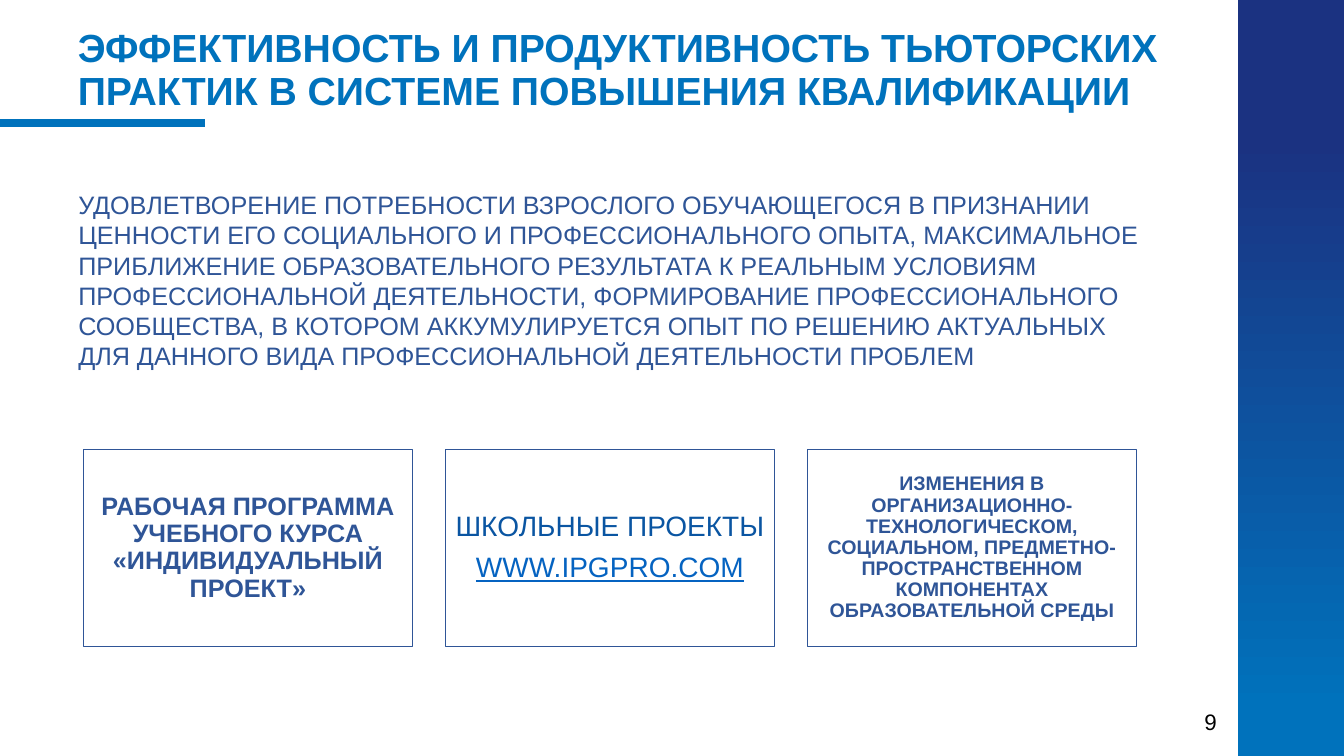
from lxml.etree import SubElement
from pptx import Presentation
from pptx.dml.color import RGBColor
from pptx.enum.shapes import MSO_CONNECTOR, MSO_SHAPE
from pptx.enum.text import MSO_ANCHOR, MSO_AUTO_SIZE, PP_ALIGN
from pptx.oxml.ns import qn
from pptx.util import Pt

SKY = "0072BC"
NAVY = "1B3281"
STEEL = "2F5597"


def tint(code):
    return RGBColor.from_string(code)


def write(frame, text, size=18, color=STEEL, bold=False, under=False,
          align=PP_ALIGN.LEFT, space=None, after=0, more=False):
    para = frame.add_paragraph() if more else frame.paragraphs[0]
    para.alignment = align
    para.line_spacing = space
    para.space_after = Pt(after)
    run = para.add_run()
    run.text = text
    font = run.font
    font.name = "Arial"
    font.size = Pt(size)
    font.bold = bold
    font.underline = under
    font.color.rgb = tint(color)


class Deck:
    def __init__(self):
        self.prs = Presentation()
        self.prs.slide_width = Pt(960)
        self.prs.slide_height = Pt(540)
        self.slide = self.prs.slides.add_slide(self.prs.slide_layouts[5])
        self.shapes = self.slide.shapes

    def title(self, text, x, y, w, h, **form):
        head = self.shapes.title
        head.left, head.top, head.width, head.height = map(Pt, (x, y, w, h))
        frame = head.text_frame
        frame.auto_size = MSO_AUTO_SIZE.NONE
        frame.vertical_anchor = MSO_ANCHOR.MIDDLE
        write(frame, text, **form)

    def label(self, text, x, y, w, h, anchor=MSO_ANCHOR.TOP, **form):
        frame = self.shapes.add_textbox(*map(Pt, (x, y, w, h))).text_frame
        frame.word_wrap = True
        frame.vertical_anchor = anchor
        write(frame, text, **form)

    def rect(self, x, y, w, h):
        shape = self.shapes.add_shape(MSO_SHAPE.RECTANGLE, *map(Pt, (x, y, w, h)))
        shape.shadow.inherit = False
        return shape

    def band(self, x, y, w, h, stops):
        shape = self.rect(x, y, w, h)
        shape.line.fill.background()
        shape.fill.gradient()
        shape.fill.gradient_angle = 270
        for stop, (place, color) in zip(shape.fill.gradient_stops, stops):
            stop.position = place
            stop.color.rgb = tint(color)

    def rule(self, x, y, end, color, width):
        line = self.shapes.add_connector(
            MSO_CONNECTOR.STRAIGHT, Pt(x), Pt(y), Pt(end), Pt(y))
        line.line.color.rgb = tint(color)
        line.line.width = Pt(width)
        SubElement(line._element.spPr, qn("a:effectLst"))

    def card(self, x, y, w, h, inset, size, lines):
        shape = self.rect(x, y, w, h)
        shape.fill.solid()
        shape.fill.fore_color.rgb = tint("FFFFFF")
        shape.line.color.rgb = tint(STEEL)
        shape.line.width = Pt(1)
        frame = shape.text_frame
        frame.word_wrap = True
        frame.vertical_anchor = MSO_ANCHOR.MIDDLE
        frame.margin_left = frame.margin_right = Pt(inset)
        frame.margin_top = frame.margin_bottom = Pt(inset)
        for row, (text, form) in enumerate(lines):
            write(frame, text, size=size, align=PP_ALIGN.CENTER, space=0.9,
                  after=0.4 * size, more=row > 0, **form)


def main():
    deck = Deck()
    deck.band(884.2, 0, 75.8, 540, [(0.18, NAVY), (0.94, SKY)])
    deck.rule(0, 87.8, 146.2, SKY, 6)
    deck.title("ЭФФЕКТИВНОСТЬ И ПРОДУКТИВНОСТЬ ТЬЮТОРСКИХ ПРАКТИК "
               "В СИСТЕМЕ ПОВЫШЕНИЯ КВАЛИФИКАЦИИ",
               48.4, 12.2, 828.6, 75.6, size=28, color=SKY, bold=True,
               space=Pt(31))
    deck.label("УДОВЛЕТВОРЕНИЕ ПОТРЕБНОСТИ ВЗРОСЛОГО ОБУЧАЮЩЕГОСЯ В ПРИЗНАНИИ "
               "ЦЕННОСТИ ЕГО СОЦИАЛЬНОГО И ПРОФЕССИОНАЛЬНОГО ОПЫТА, МАКСИМАЛЬНОЕ "
               "ПРИБЛИЖЕНИЕ ОБРАЗОВАТЕЛЬНОГО РЕЗУЛЬТАТА К РЕАЛЬНЫМ УСЛОВИЯМ "
               "ПРОФЕССИОНАЛЬНОЙ ДЕЯТЕЛЬНОСТИ, ФОРМИРОВАНИЕ ПРОФЕССИОНАЛЬНОГО "
               "СООБЩЕСТВА, В КОТОРОМ АККУМУЛИРУЕТСЯ ОПЫТ ПО РЕШЕНИЮ АКТУАЛЬНЫХ "
               "ДЛЯ ДАННОГО ВИДА ПРОФЕССИОНАЛЬНОЙ ДЕЯТЕЛЬНОСТИ ПРОБЛЕМ",
               48.8, 131.8, 774, 138.2)
    strong = {"bold": True}
    cards = [
        (6, 18, [("РАБОЧАЯ ПРОГРАММА УЧЕБНОГО КУРСА «ИНДИВИДУАЛЬНЫЙ ПРОЕКТ»",
                  strong)]),
        (7, 20, [("ШКОЛЬНЫЕ ПРОЕКТЫ", {"color": "0A55A2"}),
                 ("WWW.IPGPRO.COM", {"color": "0563C1", "under": True})]),
        (5, 14, [("ИЗМЕНЕНИЯ В ОРГАНИЗАЦИОННО-ТЕХНОЛОГИЧЕСКОМ, СОЦИАЛЬНОМ, "
                  "ПРЕДМЕТНО-ПРОСТРАНСТВЕННОМ КОМПОНЕНТАХ ОБРАЗОВАТЕЛЬНОЙ СРЕДЫ",
                  strong)]),
    ]
    for col, (inset, size, lines) in enumerate(cards):
        deck.card(59.6 + 258.6 * col, 321, 235, 141, inset, size, lines)
    deck.label("9", 836, 500.4, 57.6, 29.6, anchor=MSO_ANCHOR.MIDDLE,
               size=16, color="000000", align=PP_ALIGN.CENTER)
    deck.prs.save("out.pptx")


if __name__ == "__main__":
    main()
